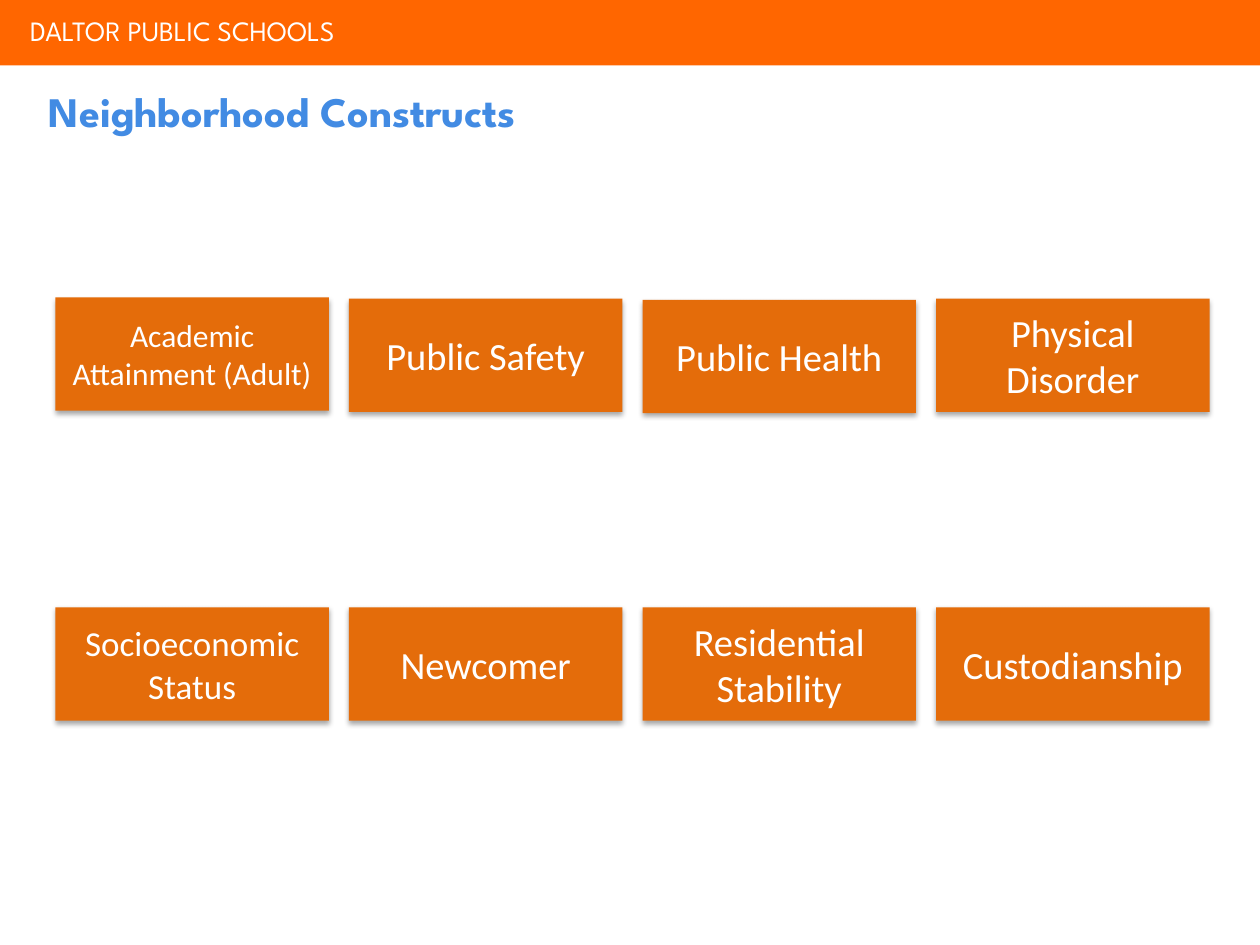
from dataclasses import dataclass

from lxml.etree import SubElement
from pptx import Presentation
from pptx.dml.color import RGBColor
from pptx.enum.shapes import MSO_SHAPE
from pptx.enum.text import MSO_ANCHOR, MSO_AUTO_SIZE, PP_ALIGN
from pptx.oxml.ns import qn
from pptx.util import Inches, Pt


@dataclass(frozen=True)
class Theme:
    banner: RGBColor = RGBColor.from_string("FF6600")
    card: RGBColor = RGBColor.from_string("E46C0A")
    title: RGBColor = RGBColor.from_string("428BE3")
    light: RGBColor = RGBColor.from_string("FFFFFF")
    shadow: str = "000000"
    heading_font: str = "League Spartan"
    body_font: str = "Calibri"
    banner_size: int = 16
    title_size: int = 24
    card_size: int = 22
    medium_card_size: int = 20
    small_card_size: int = 18


THEME = Theme()

CARD_LEFT, CARD_STEP = 0.44, 2.33
CARD_WIDTH, CARD_HEIGHT = 2.17, 0.9

# Each card: label, type size, top
CARD_ROWS = [
    [
        ("Academic Attainment (Adult)", THEME.small_card_size, 2.36),
        ("Public Safety", THEME.card_size, 2.37),
        ("Public Health", THEME.card_size, 2.38),
        ("Physical Disorder", THEME.card_size, 2.37),
    ],
    [
        ("Socioeconomic Status", THEME.medium_card_size, 4.82),
        ("Newcomer", THEME.card_size, 4.82),
        ("Residential Stability", THEME.card_size, 4.82),
        ("Custodianship", THEME.card_size, 4.82),
    ],
]


def add_run(paragraph, text, font, size, color, bold=False):
    run = paragraph.add_run()
    run.text = text
    run.font.name = font
    run.font.size = Pt(size)
    run.font.color.rgb = color
    run.font.bold = bold


def add_rectangle(slide, left, top, width, height, color):
    shape = slide.shapes.add_shape(
        MSO_SHAPE.RECTANGLE, Inches(left), Inches(top), Inches(width), Inches(height)
    )
    shape.shadow.inherit = False
    shape.fill.solid()
    shape.fill.fore_color.rgb = color
    shape.line.fill.background()
    return shape


def add_heading(slide, text, left, top, width, height, size, color, bold=False, wrap=True):
    text_box = slide.shapes.add_textbox(
        Inches(left), Inches(top), Inches(width), Inches(height)
    )
    frame = text_box.text_frame
    frame.word_wrap = wrap
    frame.auto_size = MSO_AUTO_SIZE.NONE if wrap else MSO_AUTO_SIZE.SHAPE_TO_FIT_TEXT
    add_run(frame.paragraphs[0], text, THEME.heading_font, size, color, bold)


def add_soft_shadow(shape):
    """Fill the shape's empty effect list with a soft shadow falling straight down."""
    effects = shape.element.spPr.find(qn("a:effectLst"))
    shadow = SubElement(
        effects, qn("a:outerShdw"), blurRad=str(Pt(3.1)), dist=str(Pt(1.8)),
        dir="5400000", rotWithShape="0",
    )
    color = SubElement(shadow, qn("a:srgbClr"), val=THEME.shadow)
    SubElement(color, qn("a:alpha"), val="35000")


def add_card(slide, label, size, left, top):
    card = add_rectangle(slide, left, top, CARD_WIDTH, CARD_HEIGHT, THEME.card)
    add_soft_shadow(card)
    frame = card.text_frame
    frame.word_wrap = True
    frame.vertical_anchor = MSO_ANCHOR.MIDDLE
    paragraph = frame.paragraphs[0]
    paragraph.alignment = PP_ALIGN.CENTER
    add_run(paragraph, label, THEME.body_font, size, THEME.light)


def main():
    presentation = Presentation()
    presentation.slide_width = Inches(10)
    presentation.slide_height = Inches(7.5)
    slide = presentation.slides.add_slide(presentation.slide_layouts[6])

    add_rectangle(slide, 0, 0, 10, 0.52, THEME.banner)
    add_heading(slide, "DALTOR PUBLIC SCHOOLS", 0.14, 0.06, 3.02, 0.37,
                THEME.banner_size, THEME.light, wrap=False)
    add_heading(slide, "Neighborhood Constructs", 0.29, 0.63, 9.3, 0.83,
                THEME.title_size, THEME.title, bold=True)

    for row in CARD_ROWS:
        for column, (label, size, top) in enumerate(row):
            add_card(slide, label, size, CARD_LEFT + column * CARD_STEP, top)

    presentation.save("out.pptx")


if __name__ == "__main__":
    main()
